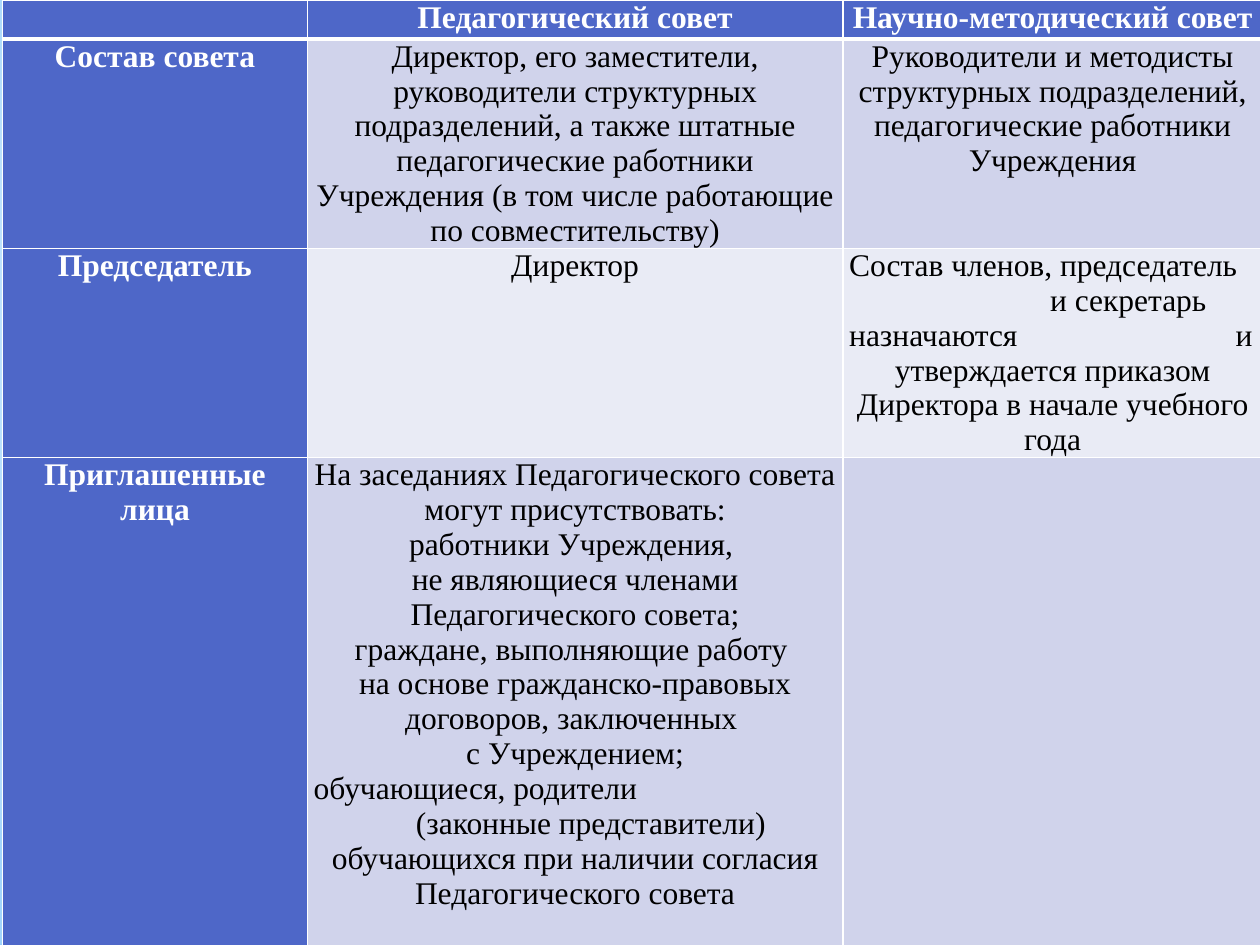
from lxml import etree
from pptx import Presentation
from pptx.dml.color import RGBColor
from pptx.enum.shapes import MSO_SHAPE
from pptx.enum.text import MSO_ANCHOR, PP_ALIGN
from pptx.oxml.ns import qn
from pptx.util import Inches, Pt

CENTER, LEFT = PP_ALIGN.CENTER, PP_ALIGN.LEFT
TOP = MSO_ANCHOR.TOP
RECT, OVAL = MSO_SHAPE.RECTANGLE, MSO_SHAPE.OVAL

COLORS = {
    "page_start": "9ED5FF",
    "page_end": "5BB9FF",
    "white": "FFFFFF",
    "sky": "B4DCFA",
    "head": "4E67C8",
    "band_dark": "D0D3EB",
    "band_light": "E9EBF5",
    "body_text": "000000",
}

# Gradient stops: position, colour, opacity (all in percent)
PAGE_STOPS = [(0, "page_start", 100), (60, "white", 100), (100, "page_end", 100)]
CENTRE = (50, 50, 50, 50)
# Backdrop: shape, top, height, stops, focus (None for a vertical gradient)
BACKDROP = [
    (RECT, 5.58, 1.92, [(0, "white", 91), (37, "white", 76), (100, "sky", 79)], CENTRE),
    (RECT, 0, 5.58, [(0, "white", 89), (48, "white", 62), (100, "sky", 79)], CENTRE),
    (RECT, 4.12, 2.5, [(0, "white", 0), (29, "white", 30), (45, "sky", 40),
                       (55, "white", 26), (65, "sky", 60), (100, "white", 0)], None),
    (OVAL, 1.75, 5.58, [(0, "white", 100), (56, "white", 0)], CENTRE),
]

COL_WIDTHS = [2.42, 4.25, 3.33]
ROW_HEIGHTS = [0.31, 1.66, 1.66, 4.18]
CELL_FORMAT = {
    "margin_left": Inches(0.05),
    "margin_right": Inches(0.05),
    "margin_top": 0,
    "margin_bottom": 0,
    "vertical_anchor": TOP,
}

# Each cell is a list of paragraphs: centred text, or (text, alignment, indent)
ROWS = [
    [[], ["Педагогический совет"], ["Научно-методический совет"]],
    [
        ["Состав совета"],
        ["Директор, его заместители, руководители структурных подразделений, "
         "а также штатные педагогические работники Учреждения "
         "(в том числе работающие по совместительству)"],
        ["Руководители и методисты структурных подразделений, "
         "педагогические работники Учреждения"],
    ],
    [
        ["Председатель"],
        ["Директор"],
        [
            ("Состав членов, председатель", LEFT, 0),
            ("и секретарь", CENTER, 1.2),
            ("назначаются\tи", LEFT, 0),
            "утверждается приказом Директора в начале учебного года",
        ],
    ],
    [
        ["Приглашенные лица"],
        [
            "На заседаниях Педагогического совета могут присутствовать:",
            "работники Учреждения, ",
            "не являющиеся членами Педагогического совета;",
            "граждане, выполняющие работу ",
            "на основе гражданско-правовых договоров, заключенных ",
            "с Учреждением;",
            ("обучающиеся, родители", LEFT, 0),
            ("(законные представители)", CENTER, 0.25),
            "обучающихся при наличии согласия Педагогического совета",
        ],
        [],
    ],
]


def rgb(name):
    return RGBColor.from_string(COLORS[name])


def set_attrs(target, values):
    for name, value in values.items():
        setattr(target, name, value)


def set_gradient(fill, props, stops, focus):
    """Fill with the stops, spreading from focus or running downwards."""
    fill.gradient()
    grad = props.find(qn("a:gradFill"))
    for child in list(grad):
        grad.remove(child)
    gs_list = etree.SubElement(grad, qn("a:gsLst"))
    for pos, color, opacity in stops:
        gs = etree.SubElement(gs_list, qn("a:gs"), pos=str(pos * 1000))
        clr = etree.SubElement(gs, qn("a:srgbClr"), val=COLORS[color])
        if opacity < 100:
            etree.SubElement(clr, qn("a:alpha"), val=str(opacity * 1000))
    if focus is None:
        etree.SubElement(grad, qn("a:lin"), ang="5400000", scaled="0")
    else:
        shade = etree.SubElement(grad, qn("a:path"), {"path": "circle"})
        edges = {edge: str(v * 1000) for edge, v in zip("ltrb", focus)}
        etree.SubElement(shade, qn("a:fillToRect"), edges)


def add_backdrop(s):
    fill = s.background.fill
    set_gradient(fill, s._element.cSld.bg.bgPr, PAGE_STOPS, (20, 10, 20, 60))
    for kind, top, height, stops, focus in BACKDROP:
        sp = s.shapes.add_shape(kind, 0, Inches(top), Inches(10), Inches(height))
        sp.shadow.inherit = False
        sp.line.fill.background()
        set_gradient(sp.fill, sp._element.spPr, stops, focus)


def add_borders(cell, bottom, top):
    """Draw the four cell edges; widths in points."""
    tc_pr = cell._tc.get_or_add_tcPr()
    for tag, width in (("lnL", 1), ("lnR", 1), ("lnT", top), ("lnB", bottom)):
        ln = etree.SubElement(tc_pr, qn(f"a:{tag}"), w=str(Pt(width)))
        fill = etree.SubElement(ln, qn("a:solidFill"))
        etree.SubElement(fill, qn("a:srgbClr"), val=COLORS["white"])


def write_text(cell, paragraphs, is_head):
    tf = cell.text_frame
    font_format = {"name": "Times New Roman", "size": Pt(18), "bold": is_head}
    for i, item in enumerate(paragraphs):
        text, align, indent = (item, CENTER, 0) if isinstance(item, str) else item
        p = tf.paragraphs[0] if i == 0 else tf.add_paragraph()
        p.alignment = align
        p_pr = p._p.get_or_add_pPr()
        if indent:
            p_pr.set("marL", str(Inches(indent)))
        if "\t" in text:
            tabs = etree.SubElement(p_pr, qn("a:tabLst"))
            etree.SubElement(tabs, qn("a:tab"), pos=str(Inches(3.2)), algn="r")
        r = p.add_run()
        r.text = text
        set_attrs(r.font, font_format)
        r.font.color.rgb = rgb("white" if is_head else "body_text")


def add_council_table(s):
    frame = s.shapes.add_table(
        len(ROW_HEIGHTS), len(COL_WIDTHS), Inches(0.02), 0,
        Inches(sum(COL_WIDTHS)), Inches(sum(ROW_HEIGHTS)))
    table = frame.table
    table.first_col = True
    for column, width in zip(table.columns, COL_WIDTHS):
        column.width = Inches(width)
    for row, height in zip(table.rows, ROW_HEIGHTS):
        row.height = Inches(height)

    for i, row in enumerate(ROWS):
        band = "band_dark" if i % 2 else "band_light"
        for j, paragraphs in enumerate(row):
            cell = table.cell(i, j)
            is_head = i == 0 or j == 0
            set_attrs(cell, CELL_FORMAT)
            add_borders(cell, bottom=3 if i == 0 else 1, top=3 if i == 1 else 1)
            cell.fill.solid()
            cell.fill.fore_color.rgb = rgb("head" if is_head else band)
            write_text(cell, paragraphs, is_head)


def main():
    prs = Presentation()
    prs.slide_width, prs.slide_height = Inches(10), Inches(7.5)
    s = prs.slides.add_slide(prs.slide_layouts[6])

    # Sky backdrop
    add_backdrop(s)

    # Comparison of the two councils
    add_council_table(s)
    prs.save("out.pptx")


if __name__ == "__main__":
    main()
